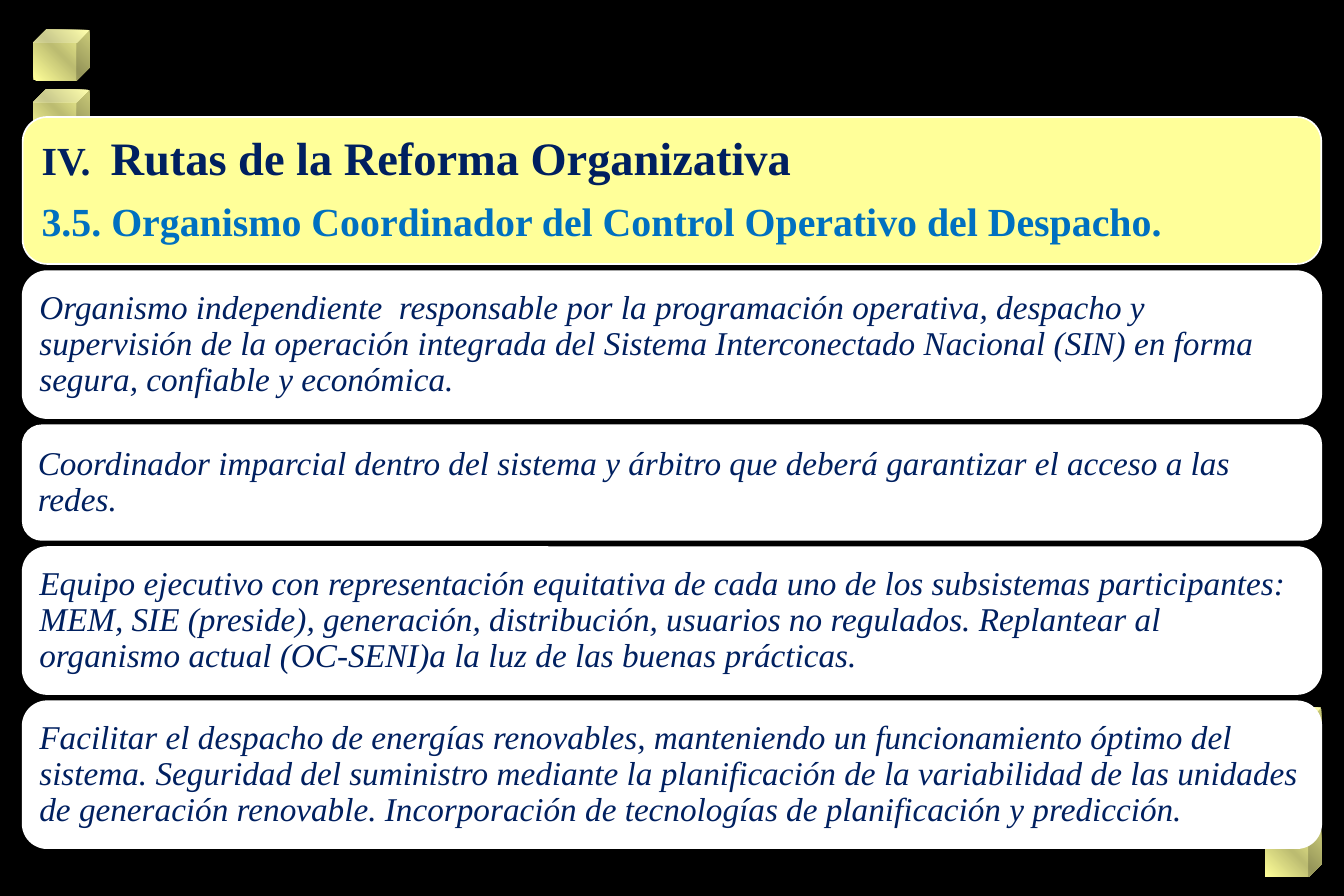
from copy import deepcopy
from dataclasses import dataclass

from pptx import Presentation
from pptx import util as u
from pptx.dml.color import RGBColor
from pptx.enum import shapes, text
from pptx.oxml.ns import qn


@dataclass(frozen=True)
class Theme:
    font: str = "Times New Roman"
    black: str = "000000"
    white: str = "FFFFFF"
    yellow: str = "FFFF99"
    olive: str = "BCBC71"
    navy: str = "002060"
    blue: str = "0070C0"
    title: int = 28
    subtitle: int = 24
    body: int = 20


T = Theme()

HEADING = [
    ([("IV.  ", T.subtitle), ("Rutas de la Reforma Organizativa", T.title)], T.navy),
    ([("3.5. Organismo Coordinador del Control Operativo del Despacho.", T.subtitle)], T.blue),
]
POINTS = [
    (1.23, "Organismo independiente  responsable por la programación operativa, despacho y supervisión de la operación integrada del Sistema Interconectado Nacional (SIN) en forma segura, confiable y económica."),
    (0.96, "Coordinador imparcial dentro del sistema y árbitro que deberá garantizar el acceso a las redes."),
    (1.23, "Equipo ejecutivo con representación equitativa de cada uno de los subsistemas participantes: MEM, SIE (preside), generación, distribución, usuarios no regulados. Replantear al organismo actual (OC-SENI)a la luz de las buenas prácticas."),
    (1.23, "Facilitar el despacho de energías renovables, manteniendo un funcionamiento óptimo del sistema. Seguridad del suministro mediante la planificación de la variabilidad de las unidades de generación renovable. Incorporación de tecnologías de planificación y predicción."),
]
CARDS = [(1.23, T.yellow, 0.1, HEADING, True)] + [
    (height, T.white, 0.08, [([(words, T.body)], T.navy)], False) for height, words in POINTS
]
CUBE_STACKS = [(0.28, 0.25, 2), (10.59, 5.92, 3)]
CUBE_W, CUBE_H, CUBE_STEP = 0.47, 0.42, 0.5
CARD_X, CARD_Y, CARD_W, CARD_GAP = 0.19, 0.98, 10.87, 0.06


def rgb(value):
    return RGBColor.from_string(value)


def add_shape(s, kind, x, y, w, h):
    sp = s.shapes.add_shape(kind, *(u.Inches(v) for v in (x, y, w, h)))
    sp.shadow.inherit = False
    return sp


def add_cube(s, x, y):
    sp = add_shape(s, shapes.MSO_SHAPE.CUBE, x, y, CUBE_W, CUBE_H)
    sp.line.fill.background()
    sp.fill.gradient()
    sp.fill.gradient_angle = 45
    for stop in sp.fill.gradient_stops:
        stop.color.rgb = rgb(T.yellow)
    first = sp.element.spPr.find(".//" + qn("a:gs"))
    first.addnext(deepcopy(first))
    middle = sp.fill.gradient_stops[1]
    middle.position = 0.5
    middle.color.rgb = rgb(T.olive)


def add_card(s, y, height, color, inset, paragraphs, bold):
    sp = add_shape(s, shapes.MSO_SHAPE.ROUNDED_RECTANGLE, CARD_X, y, CARD_W, height)
    sp.fill.solid()
    sp.fill.fore_color.rgb = rgb(color)
    sp.line.color.rgb = rgb(T.white)
    sp.line.width = u.Pt(1)
    tf = sp.text_frame
    tf.word_wrap = True
    tf.vertical_anchor = text.MSO_ANCHOR.MIDDLE
    tf.margin_left = tf.margin_right = tf.margin_top = tf.margin_bottom = u.Inches(inset)
    for i, (runs, ink) in enumerate(paragraphs):
        p = tf.add_paragraph() if i else tf.paragraphs[0]
        p.alignment = text.PP_ALIGN.LEFT
        p.line_spacing = 0.9
        if i < len(paragraphs) - 1:
            p.space_after = u.Pt(10)
        p.font.name = T.font
        p.font.bold = bold
        p.font.italic = not bold
        p.font.color.rgb = rgb(ink)
        for words, size in runs:
            r = p.add_run()
            r.text = words
            r.font.size = u.Pt(size)


def main():
    prs = Presentation()
    prs.slide_width, prs.slide_height = u.Inches(11.25), u.Inches(7.5)
    s = prs.slides.add_slide(prs.slide_layouts[6])
    s.background.fill.solid()
    s.background.fill.fore_color.rgb = rgb(T.black)
    for x, top, count in CUBE_STACKS:
        for i in range(count):
            add_cube(s, x, top + i * CUBE_STEP)
    y = CARD_Y
    for height, *card in CARDS:
        add_card(s, y, height, *card)
        y += height + CARD_GAP
    prs.save("out.pptx")


if __name__ == "__main__":
    main()
